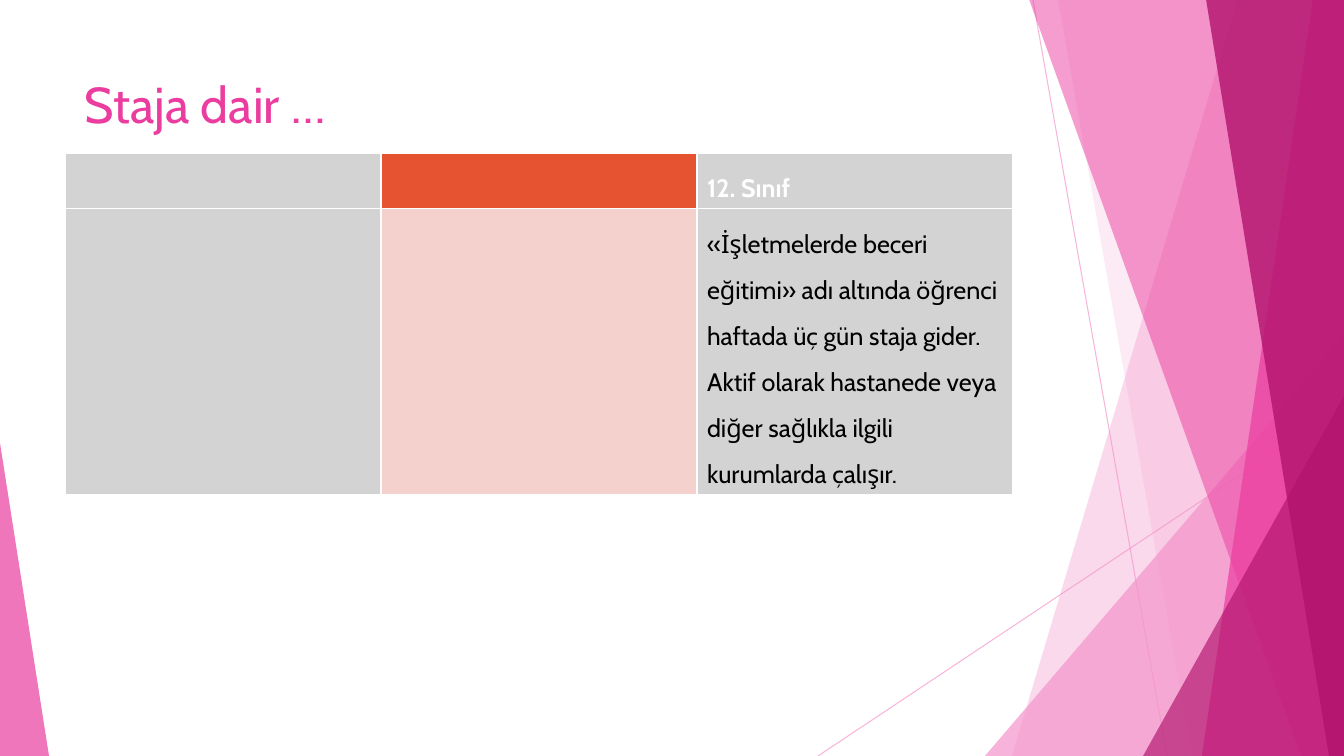
from pptx import Presentation
from pptx.dml.color import RGBColor
from pptx.enum.shapes import MSO_CONNECTOR as CONNECTOR, MSO_SHAPE as SHAPE
from pptx.enum.text import MSO_ANCHOR as ANCHOR
from pptx.oxml.ns import qn
from pptx.util import Emu, Pt
from lxml.etree import SubElement

PX = 914400 / 100.8
WIDTH, HEIGHT = 1344, 756
FONT = "Cabin"
WHITE = RGBColor(0xFF, 0xFF, 0xFF)
BLACK = RGBColor(0x00, 0x00, 0x00)
LIGHT_PINK = RGBColor(0xF4, 0x96, 0xCB)
PINK = RGBColor(0xEB, 0x3D, 0x9F)
DARK_PINK = RGBColor(0xB2, 0x13, 0x6D)
GREY = RGBColor(0xD3, 0xD3, 0xD3)
ORANGE = RGBColor(0xE6, 0x53, 0x31)
PALE_ORANGE = RGBColor(0xF5, 0xD1, 0xCE)

INTERNSHIP = (
    "«İşletmelerde beceri eğitimi» adı altında öğrenci haftada üç gün staja gider. "
    "Aktif olarak hastanede veya diğer sağlıkla ilgili kurumlarda çalışır."
)
TABLE_ROWS = [
    (55, [("", GREY), ("", ORANGE), ("12. Sınıf", GREY)], WHITE, True),
    (286, [("", GREY), ("", PALE_ORANGE), (INTERNSHIP, GREY)], BLACK, False),
]


def px(*lengths):
    return [Emu(round(length * PX)) for length in lengths]


def set_opacity(shape, percent):
    for color in shape._element.spPr.iter(qn("a:srgbClr")):
        SubElement(color, qn("a:alpha")).set("val", str(percent * 1000))


def paint(shape, color, opacity):
    shape.shadow.inherit = False
    shape.fill.solid()
    shape.fill.fore_color.rgb = color
    shape.line.fill.background()
    set_opacity(shape, opacity)


def add_line(slide, x1, y1, x2, y2):
    line = slide.shapes.add_connector(CONNECTOR.STRAIGHT, *px(x1, y1, x2, y2))
    line.line.color.rgb = LIGHT_PINK
    line.line.width = Pt(0.75)
    set_opacity(line, 70)
    SubElement(line._element.spPr, qn("a:effectLst"))


def add_band(slide, top_x, bottom_x, color, opacity):
    builder = slide.shapes.build_freeform(top_x, -1, scale=PX)
    builder.add_line_segments([(WIDTH, -1), (WIDTH, HEIGHT), (bottom_x, HEIGHT)])
    paint(builder.convert_to_shape(), color, opacity)


def add_triangle(slide, left, top, width, apex, color, opacity):
    box = px(left, top, width, HEIGHT - top)
    triangle = slide.shapes.add_shape(SHAPE.ISOSCELES_TRIANGLE, *box)
    triangle.adjustments[0] = apex
    paint(triangle, color, opacity)


def style_paragraph(paragraph, size, color, bold=False):
    paragraph.font.name = FONT
    paragraph.font.size = Pt(size)
    paragraph.font.color.rgb = color
    paragraph.font.bold = bold


def add_title(slide, text):
    frame = slide.shapes.add_textbox(*px(75, 68, 948, 145)).text_frame
    frame.word_wrap = True
    frame.vertical_anchor = ANCHOR.TOP
    frame.text = text
    style_paragraph(frame.paragraphs[0], 36, PINK)


def add_class_table(slide):
    height = sum(row[0] for row in TABLE_ROWS)
    box = px(65, 153, 948, height)
    table = slide.shapes.add_table(len(TABLE_ROWS), 3, *box).table
    for row, (row_height, cells, color, bold) in zip(table.rows, TABLE_ROWS):
        row.height = px(row_height)[0]
        for cell, (text, fill) in zip(row.cells, cells):
            cell.fill.solid()
            cell.fill.fore_color.rgb = fill
            cell.text = text
            paragraph = cell.text_frame.paragraphs[0]
            paragraph.line_spacing = 1.5
            style_paragraph(paragraph, 18, color, bold)


def main():
    presentation = Presentation()
    presentation.slide_width, presentation.slide_height = px(WIDTH, HEIGHT)
    slide = presentation.slides.add_slide(presentation.slide_layouts[6])

    add_line(slide, 1033, 0, 1167, HEIGHT)
    add_line(slide, WIDTH, 406, 818, HEIGHT)
    add_band(slide, 1238, 1012, LIGHT_PINK, 36)
    add_band(slide, 1058, 1192, LIGHT_PINK, 20)
    add_triangle(slide, 985, 336, 359, 1, LIGHT_PINK, 72)
    add_band(slide, 1029, 1301, PINK, 50)
    add_band(slide, 1313, 1202, PINK, 70)
    add_band(slide, 1206, 1329, DARK_PINK, 80)
    add_triangle(slide, 1143, 396, 201, 1, DARK_PINK, 66)
    add_triangle(slide, 0, 443, 49, 0, PINK, 70)

    add_title(slide, "Staja dair …")
    add_class_table(slide)
    presentation.save("out.pptx")


if __name__ == "__main__":
    main()
